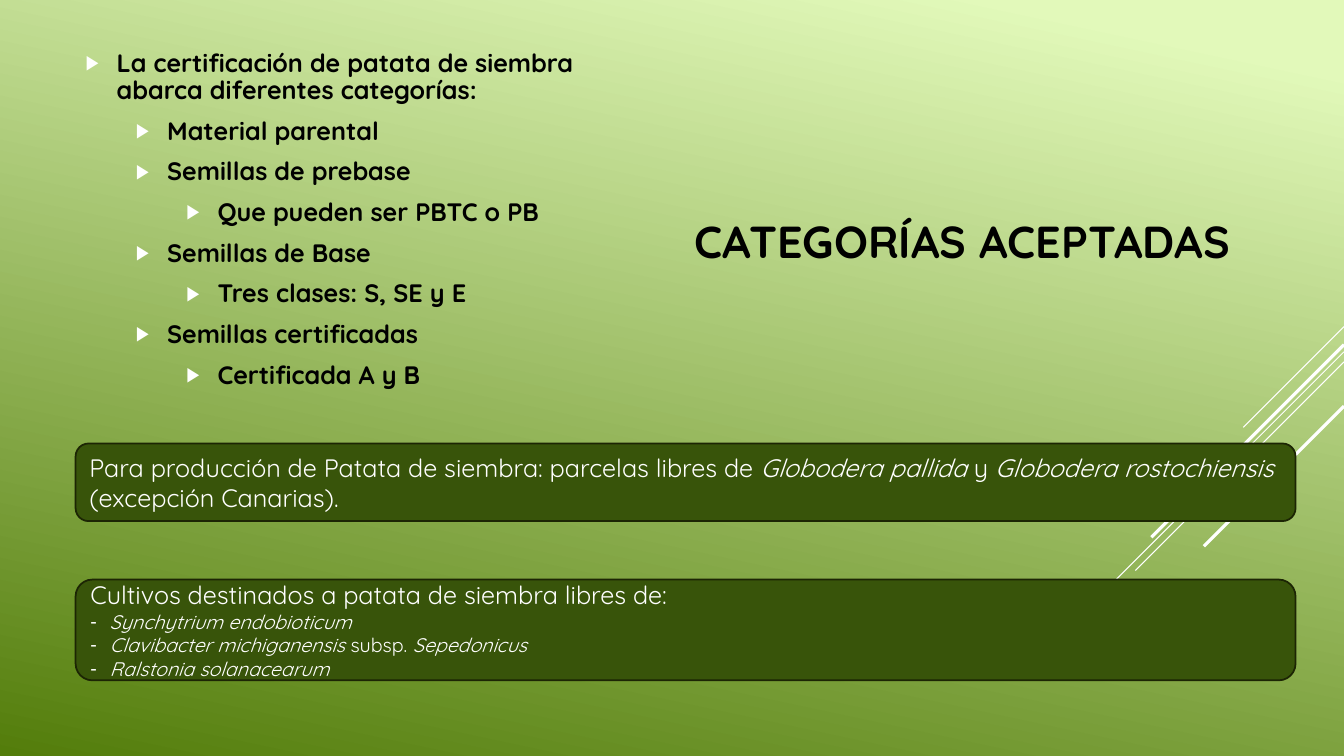
from lxml.etree import SubElement
from pptx import Presentation
from pptx.dml.color import RGBColor
from pptx.enum.shapes import MSO_CONNECTOR, MSO_SHAPE
from pptx.enum.text import MSO_ANCHOR, PP_ALIGN
from pptx.oxml.ns import qn
from pptx.util import Inches, Pt

WHITE = RGBColor(0xFF, 0xFF, 0xFF)
BLACK = RGBColor(0x00, 0x00, 0x00)
LIGHT_GREEN = RGBColor(0xE2, 0xF9, 0xBA)
MID_GREEN = RGBColor(0x53, 0x7D, 0x0B)
PANEL_GREEN = RGBColor(0x38, 0x54, 0x0A)
PANEL_EDGE = RGBColor(0x1C, 0x25, 0x04)
FONT = "Quicksand"
SLIDE_WIDTH = 13.33

# Start height at the right edge, horizontal run, line width
DIAGONALS = [
    (3.24, 1.0, 0.75),
    (3.49, 3.26, 0.75),
    (3.59, 2.07, 0.75),
    (3.42, 1.91, 2.25),
    (4.03, 1.39, 2.25),
]
CATEGORIES = [
    (0, "La certificación de patata de siembra abarca diferentes categorías:"),
    (1, "Material parental"),
    (1, "Semillas de prebase"),
    (2, "Que pueden ser PBTC o PB"),
    (1, "Semillas de Base"),
    (2, "Tres clases: S, SE y E"),
    (1, "Semillas certificadas"),
    (2, "Certificada A y B"),
]
# Each panel paragraph: size, bulleted, runs of (text, italic)
PLOT_RULE = [
    (18, False, [
        ("Para producción de Patata de siembra: parcelas libres de ", False),
        ("Globodera pallida ", True),
        ("y ", False),
        ("Globodera rostochiensis ", True),
        ("(excepción Canarias).", False),
    ]),
]
CROP_RULE = [
    (18, False, [("Cultivos destinados a patata de siembra libres de:", False)]),
    (14, True, [("Synchytrium endobioticum", True)]),
    (14, True, [
        ("Clavibacter michiganensis ", True),
        ("subsp. ", False),
        ("Sepedonicus", True),
    ]),
    (14, True, [("Ralstonia solanacearum", True)]),
]


def apply_format(target, values):
    for attribute, value in values.items():
        setattr(target, attribute, value)


def add_run(paragraph, text, color, size, **styles):
    run = paragraph.add_run()
    run.text = text
    run.font.color.rgb = color
    apply_format(run.font, {"name": FONT, "size": Pt(size), **styles})


def set_bullet(paragraph, character, indent, hanging, percent=100):
    properties = paragraph._p.get_or_add_pPr()
    properties.set("marL", str(Inches(indent)))
    properties.set("indent", str(-Inches(hanging)))
    color = SubElement(properties, qn("a:buClr"))
    SubElement(color, qn("a:srgbClr"), val=str(WHITE))
    SubElement(properties, qn("a:buSzPct"), val=str(percent * 1000))
    SubElement(properties, qn("a:buFont"), typeface="Arial")
    SubElement(properties, qn("a:buChar"), char=character)


def paint_background(slide):
    fill = slide.background.fill
    fill.gradient()
    fill.gradient_angle = 360 - 102
    stops = zip(fill.gradient_stops, [(0.07, LIGHT_GREEN), (1, MID_GREEN)])
    for stop, (position, color) in stops:
        stop.position = position
        stop.color.rgb = color


def add_diagonal(slide, top, run, width):
    """Draw a 45 degree line down and left from the right edge."""
    diagonal = slide.shapes.add_connector(
        MSO_CONNECTOR.STRAIGHT,
        Inches(SLIDE_WIDTH), Inches(top),
        Inches(SLIDE_WIDTH - run), Inches(top + run),
    )
    diagonal.line.color.rgb = WHITE
    diagonal.line.width = Pt(width)
    SubElement(diagonal._element.spPr, qn("a:effectLst"))


def set_title(slide, text):
    title = slide.shapes.title
    apply_format(title, {
        "left": Inches(6.67), "top": Inches(1.76),
        "width": Inches(6.03), "height": Inches(1.25),
    })
    apply_format(title.text_frame, {
        "word_wrap": True,
        "vertical_anchor": MSO_ANCHOR.MIDDLE,
        "margin_left": Inches(0.22),
    })
    paragraph = title.text_frame.paragraphs[0]
    paragraph.alignment = PP_ALIGN.LEFT
    add_run(paragraph, text, BLACK, 32, bold=True)


def next_paragraph(frame, index):
    return frame.add_paragraph() if index else frame.paragraphs[0]


def add_category_list(slide, categories):
    frame = slide.shapes.add_textbox(
        Inches(0.75), Inches(0.56), Inches(5.2), Inches(3.65)
    ).text_frame
    apply_format(frame, {
        "word_wrap": True,
        "vertical_anchor": MSO_ANCHOR.MIDDLE,
        "margin_bottom": Inches(0.45),
    })
    for index, (level, text) in enumerate(categories):
        paragraph = next_paragraph(frame, index)
        apply_format(paragraph, {
            "level": level, "line_spacing": 0.9,
            "space_before": Pt(3.6), "space_after": Pt(6),
        })
        set_bullet(paragraph, "▶", 0.31 + 0.5 * level, 0.31, 80)
        add_run(paragraph, text, BLACK, 18, bold=True)


def add_panel(slide, top, height, paragraphs):
    panel = slide.shapes.add_shape(
        MSO_SHAPE.ROUNDED_RECTANGLE,
        Inches(0.75), Inches(top), Inches(12.1), Inches(height),
    )
    panel.shadow.inherit = False
    panel.fill.solid()
    panel.fill.fore_color.rgb = PANEL_GREEN
    panel.line.color.rgb = PANEL_EDGE
    panel.line.width = Pt(1.25)
    frame = panel.text_frame
    apply_format(frame, {"word_wrap": True, "vertical_anchor": MSO_ANCHOR.MIDDLE})
    for index, (size, bulleted, runs) in enumerate(paragraphs):
        paragraph = next_paragraph(frame, index)
        paragraph.alignment = PP_ALIGN.LEFT
        if bulleted:
            set_bullet(paragraph, "-", 0.19, 0.19)
        for text, italic in runs:
            add_run(paragraph, text, WHITE, size, italic=italic)


def main():
    presentation = Presentation()
    presentation.slide_width = Inches(SLIDE_WIDTH)
    presentation.slide_height = Inches(7.5)
    slide = presentation.slides.add_slide(
        presentation.slide_layouts.get_by_name("Title Only")
    )
    paint_background(slide)
    for diagonal in DIAGONALS:
        add_diagonal(slide, *diagonal)
    set_title(slide, "CATEGORÍAS ACEPTADAS")
    add_category_list(slide, CATEGORIES)
    add_panel(slide, 4.4, 0.77, PLOT_RULE)
    add_panel(slide, 5.75, 1, CROP_RULE)
    presentation.save("out.pptx")


if __name__ == "__main__":
    main()
